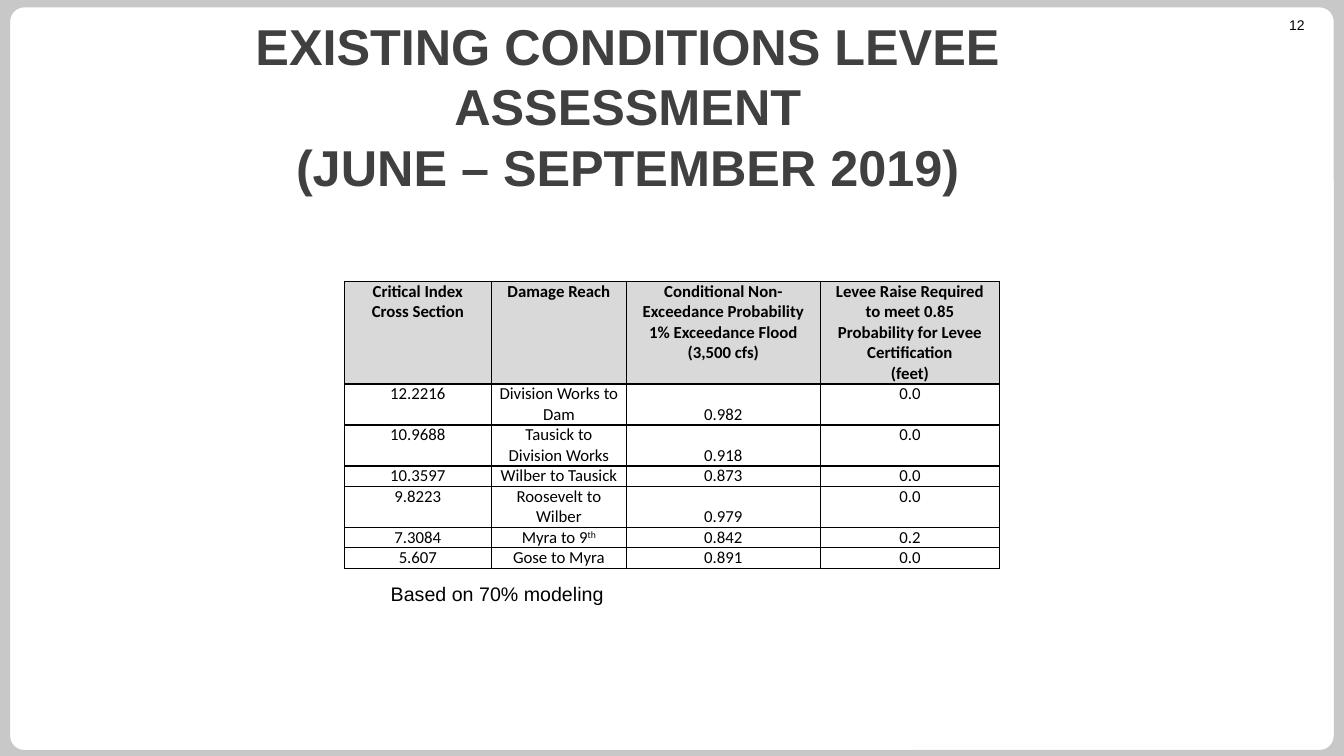
from dataclasses import dataclass

from lxml import etree
from pptx import Presentation
from pptx.dml.color import RGBColor
from pptx.enum.shapes import MSO_SHAPE
from pptx.enum.text import MSO_ANCHOR, PP_ALIGN
from pptx.oxml.ns import qn
from pptx.util import Pt

CENTER, RIGHT, LEFT = PP_ALIGN.CENTER, PP_ALIGN.RIGHT, PP_ALIGN.LEFT
TOP, MIDDLE, BOTTOM = MSO_ANCHOR.TOP, MSO_ANCHOR.MIDDLE, MSO_ANCHOR.BOTTOM
ROUNDED = MSO_SHAPE.ROUNDED_RECTANGLE
TITLE_ONLY = 5


@dataclass(frozen=True)
class Theme:
    frame: RGBColor = RGBColor(0xC8, 0xC8, 0xC8)
    paper: RGBColor = RGBColor(0xFF, 0xFF, 0xFF)
    title: RGBColor = RGBColor(0x40, 0x40, 0x40)
    text: RGBColor = RGBColor(0, 0, 0)
    header: RGBColor = RGBColor(0xD9, 0xD9, 0xD9)
    font: str = "Arial"
    table_font: str = "Calibri"
    title_size: int = 36
    note_size: int = 14
    table_size: int = 12
    number_size: int = 10


THEME = Theme()
TABLE_LINE = 14.65
COLUMN_WIDTHS = (105, 96.5, 138.5, 128)
HEADERS = (
    "Critical Index\nCross Section",
    "Damage Reach",
    "Conditional Non-Exceedance Probability\n1% Exceedance Flood\n(3,500 cfs)",
    "Levee Raise Required to meet 0.85 Probability for Levee Certification\n(feet)",
)
HEADER_LINES = 5
# Cross section, reach, probability, levee raise, text lines in the row
REACHES = (
    ("12.2216", "Division Works to Dam", "0.982", "0.0", 2),
    ("10.9688", "Tausick to Division Works", "0.918", "0.0", 2),
    ("10.3597", "Wilber to Tausick", "0.873", "0.0", 1),
    ("9.8223", "Roosevelt to Wilber", "0.979", "0.0", 2),
    ("7.3084", "Myra to 9^th", "0.842", "0.2", 1),
    ("5.607", "Gose to Myra", "0.891", "0.0", 1),
)


def style(p, size, color, font=THEME.font, bold=False, align=LEFT):
    p.alignment = align
    p.font.size, p.font.name, p.font.bold = Pt(size), font, bold
    p.font.color.rgb = color


def add_frame(slide, x, y, w, h):
    """Put the rounded white page behind everything else."""
    bg = slide.background.fill
    bg.solid()
    bg.fore_color.rgb = THEME.frame
    sp = slide.shapes.add_shape(ROUNDED, Pt(x), Pt(y), Pt(w), Pt(h))
    sp.adjustments[0] = 0.023
    sp.shadow.inherit = False
    sp.fill.solid()
    sp.fill.fore_color.rgb = THEME.paper
    sp.line.color.rgb = THEME.frame
    sp.line.width = Pt(4.5)
    slide.shapes._spTree.insert(2, sp._element)


def add_title(slide, text, x, y, w, h):
    sp = slide.shapes.title
    sp.left, sp.top, sp.width, sp.height = Pt(x), Pt(y), Pt(w), Pt(h)
    tf = sp.text_frame
    tf.word_wrap = True
    tf.vertical_anchor = MIDDLE
    p = tf.paragraphs[0]
    p.text = text
    style(p, THEME.title_size, THEME.title, bold=True, align=CENTER)


def add_label(slide, text, size, x, y, w, h, align=LEFT, inset=3.6, wrap=False):
    tf = slide.shapes.add_textbox(Pt(x), Pt(y), Pt(w), Pt(h)).text_frame
    tf.word_wrap = wrap
    tf.margin_top = tf.margin_bottom = Pt(inset)
    p = tf.paragraphs[0]
    p.text = text
    style(p, size, THEME.text, align=align)


def add_borders(cell):
    tc_pr = cell._tc.get_or_add_tcPr()
    for i, side in enumerate(("a:lnL", "a:lnR", "a:lnT", "a:lnB")):
        ln = etree.Element(qn(side), w=str(Pt(1)))
        fill = etree.SubElement(ln, qn("a:solidFill"))
        etree.SubElement(fill, qn("a:srgbClr"), val=str(THEME.text))
        tc_pr.insert(i, ln)


def fill_cell(cell, text, fill, bold, anchor):
    """Write the text; whatever follows ^ is superscript."""
    cell.margin_left = cell.margin_right = Pt(5)
    cell.margin_top = cell.margin_bottom = Pt(0)
    cell.vertical_anchor = anchor
    cell.fill.solid()
    cell.fill.fore_color.rgb = fill
    add_borders(cell)
    tf = cell.text_frame
    for i, line in enumerate(text.split("\n")):
        p = tf.add_paragraph() if i else tf.paragraphs[0]
        base, _, raised = line.partition("^")
        p.add_run().text = base
        if raised:
            r = p.add_run()
            r.text = raised
            r.font._element.set("baseline", "30000")
        style(p, THEME.table_size, THEME.text, THEME.table_font, bold, CENTER)


def add_levee_table(slide, x, y):
    rows = [(*HEADERS, HEADER_LINES), *REACHES]
    heights = [row[-1] * TABLE_LINE for row in rows]
    table = slide.shapes.add_table(
        len(rows), len(COLUMN_WIDTHS), Pt(x), Pt(y),
        Pt(sum(COLUMN_WIDTHS)), Pt(sum(heights))).table
    table.first_row = table.horz_banding = False
    for column, width in zip(table.columns, COLUMN_WIDTHS):
        column.width = Pt(width)
    for i, (row, height) in enumerate(zip(rows, heights)):
        table.rows[i].height = Pt(height)
        for j, text in enumerate(row[:-1]):
            anchor = BOTTOM if i and j in (1, 2) else TOP
            fill = THEME.paper if i else THEME.header
            fill_cell(table.cell(i, j), text, fill, i == 0, anchor)


def main():
    prs = Presentation()
    prs.slide_width, prs.slide_height = Pt(960), Pt(540)
    slide = prs.slides.add_slide(prs.slide_layouts[TITLE_ONLY])
    add_frame(slide, 5, 3, 950, 535)
    add_label(slide, "12", THEME.number_size, 878.5, 11.5, 60.5, 12,
              RIGHT, inset=0, wrap=True)
    add_title(slide, "EXISTING CONDITIONS LEVEE ASSESSMENT\v(JUNE – SEPTEMBER 2019)",
              47.5, 7.5, 802, 136)
    add_levee_table(slide, 246, 201)
    add_label(slide, "Based on 70% modeling", THEME.note_size, 272, 412, 167, 24.5)
    prs.save("out.pptx")


if __name__ == "__main__":
    main()
